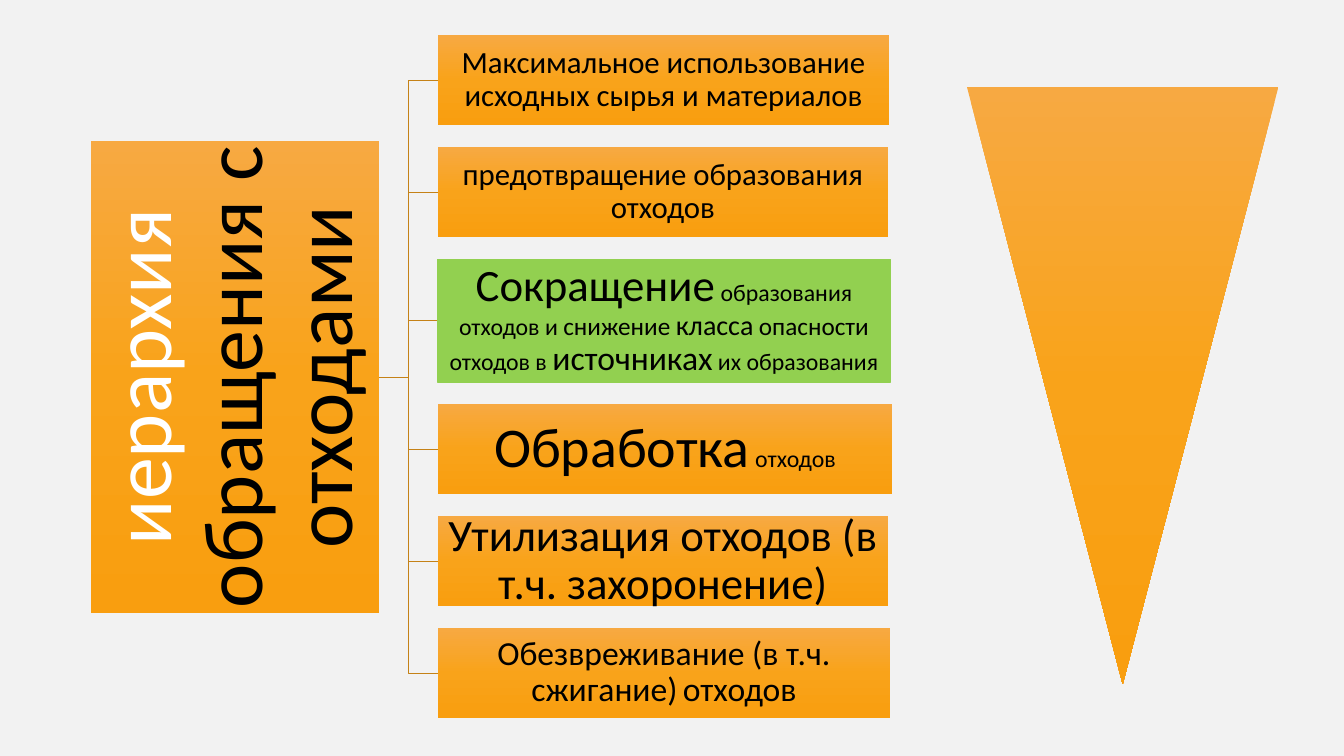
from pptx import Presentation
from pptx.dml.color import RGBColor
from pptx.enum.shapes import MSO_CONNECTOR, MSO_SHAPE
from pptx.enum.text import MSO_ANCHOR, PP_ALIGN
from pptx.oxml import parse_xml
from pptx.oxml.ns import nsdecls, qn
from pptx.util import Inches, Pt
from lxml.etree import SubElement

BLACK = RGBColor(0x00, 0x00, 0x00)
WHITE = RGBColor(0xFF, 0xFF, 0xFF)
GREEN = RGBColor(0x92, 0xD0, 0x50)
BROWN = RGBColor(0xC5, 0x82, 0x17)
PALE = RGBColor(0xF2, 0xF2, 0xF2)
ORANGE_STOPS = [
    (0, RGBColor(0xF7, 0xA9, 0x42)),
    (50, RGBColor(0xF9, 0xA3, 0x1A)),
    (100, RGBColor(0xF9, 0x9E, 0x0F)),
]

# Each text is a list of (words, size, colour)
ROOT = [("иерархия ", 60, WHITE), ("обращения с отходами", 60, BLACK)]

# Each step is (width, height, fill, text); no fill means the orange gradient
STEPS = [
    (4.48, 0.89, None, [
        ("Максимальное использование исходных сырья и материалов", 22, BLACK)]),
    (4.47, 0.89, None, [("предотвращение образования отходов", 22, BLACK)]),
    (4.49, 1.22, GREEN, [
        ("Сокращение", 32, BLACK), (" образования отходов и ", 17, BLACK),
        ("снижение", 18, BLACK), (" ", 17, BLACK), ("класса", 20, BLACK),
        (" ", 17, BLACK), ("опасности", 18, BLACK), (" отходов в ", 17, BLACK),
        ("источниках", 24, BLACK), (" их образования", 17, BLACK)]),
    (4.51, 0.89, None, [("Обработка", 40, BLACK), (" отходов", 17, BLACK)]),
    (4.47, 0.89, None, [("Утилизация отходов (в т.ч. захоронение)", 32, BLACK)]),
    (4.49, 0.89, None, [
        ("Обезвреживание (в т.ч. сжигание)", 24, BLACK), (" ", 17, BLACK),
        ("отходов", 24, BLACK)]),
]

ROOT_RIGHT, ROOT_MIDDLE = 3.76, 3.74
ROOT_LENGTH, ROOT_DEPTH = 4.69, 2.86
STEP_LEFT, STEP_TOP, STEP_GAP = 4.34, 0.35, 0.22


def fill_orange(shape):
    """Fill with a gradient that runs down the page however the shape is turned."""
    stops = "".join(
        f'<a:gs pos="{percent * 1000}"><a:srgbClr val="{colour}"/></a:gs>'
        for percent, colour in ORANGE_STOPS)
    gradient = parse_xml(
        f'<a:gradFill {nsdecls("a")} rotWithShape="0"><a:gsLst>{stops}</a:gsLst>'
        '<a:lin ang="5400000" scaled="0"/></a:gradFill>')
    shape._element.spPr.find(qn("a:prstGeom")).addnext(gradient)


def add_block(page, preset, left, top, width, height, fill=None, rotation=0):
    block = page.shapes.add_shape(
        preset, Inches(left), Inches(top), Inches(width), Inches(height))
    block.shadow.inherit = False
    block.rotation = rotation
    if fill is None:
        fill_orange(block)
        block.line.fill.background()
    else:
        block.fill.solid()
        block.fill.fore_color.rgb = fill
        block.line.color.rgb = fill
        block.line.width = Pt(0.75)
    return block


def write(block, text, inset=0.02):
    frame = block.text_frame
    frame.word_wrap = True
    frame.vertical_anchor = MSO_ANCHOR.MIDDLE
    frame.margin_left = frame.margin_right = Inches(inset)
    frame.margin_top = frame.margin_bottom = Inches(inset)
    para = frame.paragraphs[0]
    para.alignment = PP_ALIGN.CENTER
    para.line_spacing = 0.9
    for words, size, colour in text:
        span = para.add_run()
        span.text = words
        span.font.name = "Calibri"
        span.font.size = Pt(size)
        span.font.color.rgb = colour


def add_branch(page, middle):
    branch = page.shapes.add_connector(
        MSO_CONNECTOR.ELBOW, Inches(ROOT_RIGHT), Inches(ROOT_MIDDLE),
        Inches(STEP_LEFT), Inches(middle))
    branch.line.color.rgb = BROWN
    branch.line.width = Pt(0.5)
    SubElement(branch._element.spPr, qn("a:effectLst"))


def main():
    deck = Presentation()
    deck.slide_width, deck.slide_height = Inches(13.33), Inches(7.5)
    page = deck.slides.add_slide(deck.slide_layouts[6])
    page.background.fill.solid()
    page.background.fill.fore_color.rgb = PALE

    top = STEP_TOP
    tops = []
    for width, height, fill, text in STEPS:
        tops.append(top)
        add_branch(page, top + height / 2)
        top += height + STEP_GAP

    root = add_block(
        page, MSO_SHAPE.RECTANGLE, ROOT_RIGHT - (ROOT_DEPTH + ROOT_LENGTH) / 2,
        ROOT_MIDDLE - ROOT_DEPTH / 2, ROOT_LENGTH, ROOT_DEPTH, rotation=270)
    write(root, ROOT, inset=0.04)

    for top, (width, height, fill, text) in zip(tops, STEPS):
        step = add_block(
            page, MSO_SHAPE.RECTANGLE, STEP_LEFT, top, width, height, fill)
        write(step, text)

    funnel = add_block(
        page, MSO_SHAPE.TRAPEZOID, 9.59, 0.86, 3.09, 5.93, rotation=180)
    funnel.adjustments[0] = 0.5

    deck.save("out.pptx")


if __name__ == "__main__":
    main()
